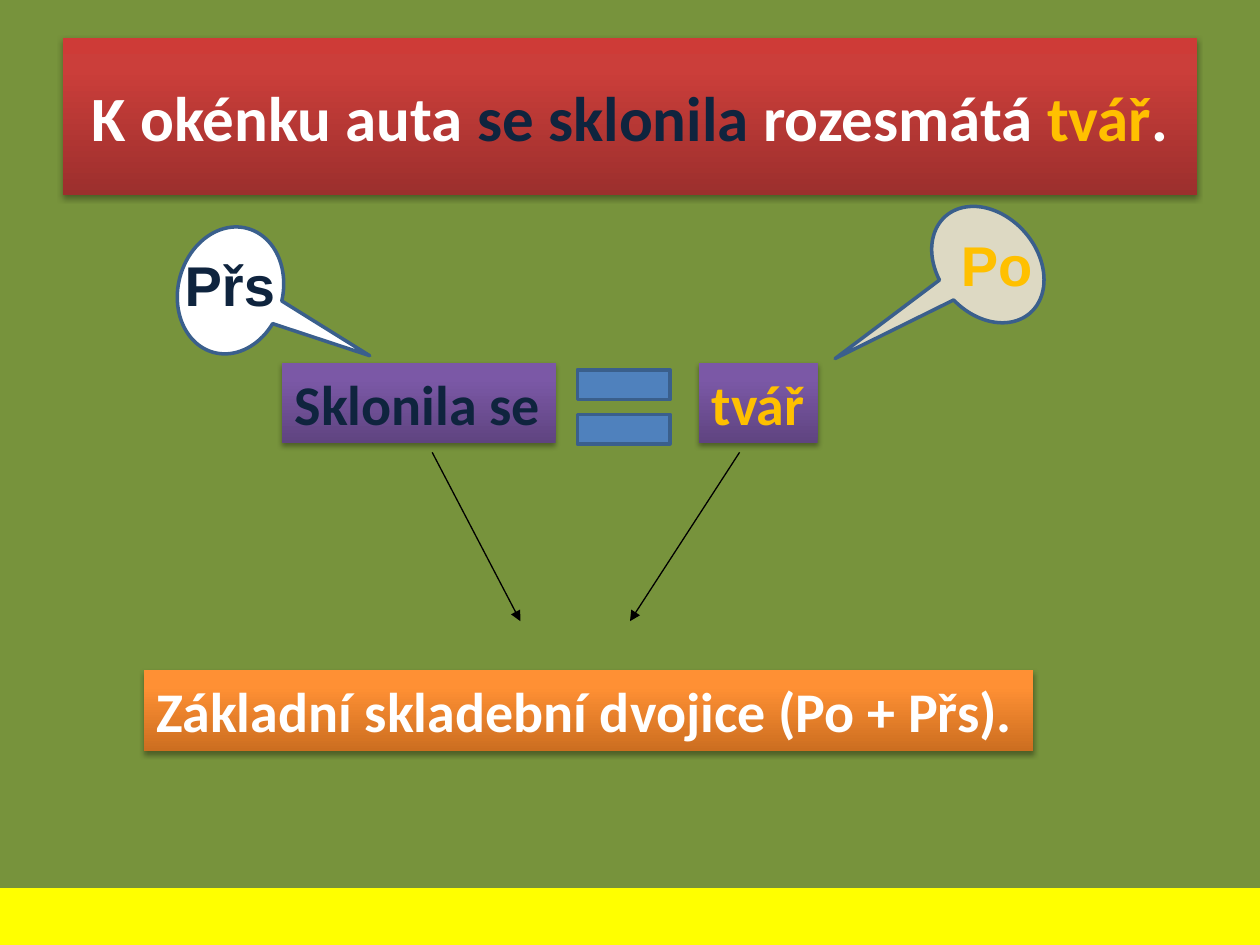
from lxml import etree
from pptx import Presentation
from pptx.dml.color import RGBColor
from pptx.enum import shapes, text
from pptx.oxml import ns
from pptx.util import Inches, Pt

COLORS = {
    "green": "77933C", "navy": "0F243E", "gold": "FFC000", "white": "FFFFFF",
    "beige": "DDD9C3", "blue": "4F81BD", "outline": "3A5F8C",
    "yellow": "FFFF00", "black": "000000",
}
# Gradient stops from the bottom edge to the top edge
GRADIENTS = {
    "red": [(0, "9C2F2D"), (80, "CB3E3A"), (100, "CE3B37")],
    "purple": [(0, "5F4480"), (80, "7B58A6"), (100, "7C57A8")],
    "orange": [(0, "CC6E20"), (80, "FF9034"), (100, "FF9136")],
}


def rgb(name):
    return RGBColor.from_string(COLORS[name])


def sub(parent, tag, **attrs):
    return etree.SubElement(parent, ns.qn(tag), {k: str(v) for k, v in attrs.items()})


def add_text(s, runs, size, font="Calibri", align=None, fit=True):
    """Write bold runs, each a (text, colour) pair, in one paragraph."""
    tf = s.text_frame
    tf.word_wrap = not fit
    tf.vertical_anchor = text.MSO_ANCHOR.TOP if fit else text.MSO_ANCHOR.MIDDLE
    if fit:
        tf.auto_size = text.MSO_AUTO_SIZE.SHAPE_TO_FIT_TEXT
    p = tf.paragraphs[0]
    p.alignment = align or text.PP_ALIGN.LEFT
    for words, color in runs:
        r = p.add_run()
        r.text = words
        r.font.name = font
        r.font.size = Pt(size)
        r.font.bold = True
        r.font.color.rgb = rgb(color)


def add_flat(sp, kind, box, fill, line):
    s = sp.add_shape(kind, *map(Inches, box))
    s.shadow.inherit = False
    s.fill.solid()
    s.fill.fore_color.rgb = rgb(fill)
    s.line.color.rgb = rgb(line)
    s.line.width = Pt(2)
    return s


def add_panel(sp, box, gradient):
    """Add a borderless rectangle with a vertical gradient and a soft shadow."""
    s = sp.add_shape(shapes.MSO_SHAPE.RECTANGLE, *map(Inches, box))
    s.line.fill.background()
    s.fill.gradient()
    s.fill.gradient_angle = 90
    stops = s._element.spPr.find(".//" + ns.qn("a:gsLst"))
    for stop in list(stops):
        stops.remove(stop)
    for pos, color in GRADIENTS[gradient]:
        sub(sub(stops, "a:gs", pos=pos * 1000), "a:srgbClr", val=color)

    s.shadow.inherit = False
    effects = s._element.spPr.find(ns.qn("a:effectLst"))
    shadow = sub(effects, "a:outerShdw", blurRad=Pt(3.1), dist=Pt(1.8),
                 dir=90 * 60000, rotWithShape=0)
    sub(sub(shadow, "a:srgbClr", val=COLORS["black"]), "a:alpha", val=35000)
    return s


def add_callout(sp, box, rotation, tail, fill):
    s = add_flat(sp, shapes.MSO_SHAPE.OVAL_CALLOUT, box, fill, "outline")
    s.rotation = rotation
    s.adjustments[0], s.adjustments[1] = tail


def add_label(sp, box, words, color):
    s = sp.add_textbox(*map(Inches, box))
    add_text(s, [(words, color)], 32, "Arial", text.PP_ALIGN.CENTER)


def add_arrow(sp, start, end):
    c = sp.add_connector(shapes.MSO_CONNECTOR.STRAIGHT, *map(Inches, start + end))
    c.line.color.rgb = rgb("black")
    c.line.width = Pt(0.75)
    sub(c.line._get_or_add_ln(), "a:tailEnd", type="triangle")
    sub(c._element.spPr, "a:effectLst")


def main():
    prs = Presentation()
    prs.slide_width, prs.slide_height = Inches(10), Inches(7.5)
    slide = prs.slides.add_slide(prs.slide_layouts[6])
    slide.background.fill.solid()
    slide.background.fill.fore_color.rgb = rgb("green")
    sp = slide.shapes

    # Sentence
    title = add_panel(sp, (0.5, 0.3, 9, 1.25), "red")
    add_text(title, [("K okénku auta ", "white"), ("se sklonila ", "navy"),
                     ("rozesmátá ", "white"), ("tvář", "gold"), (".", "white")],
             36, align=text.PP_ALIGN.CENTER, fit=False)

    # Arrows from the two words to the conclusion
    add_arrow(sp, (3.43, 3.59), (4.13, 4.93))
    add_arrow(sp, (5.87, 3.59), (5, 4.93))

    # Callouts naming predicate and subject
    add_callout(sp, (1.32, 1.89, 1.02, 0.83), 285.5, (-0.2, 1.45), "white")
    add_callout(sp, (7.33, 1.71, 1.02, 0.78), 48.9, (-0.23, 1.8), "beige")
    add_label(sp, (7.52, 1.78, 0.78, 0.64), "Po", "gold")
    add_label(sp, (1.36, 1.94, 0.93, 0.64), "Přs", "navy")

    # Word pair and conclusion
    for box, gradient, words, color in [
        ((2.24, 2.88, 2.17, 0.64), "purple", "Sklonila se", "navy"),
        ((1.14, 5.32, 7.06, 0.64), "orange",
         "Základní skladební dvojice (Po + Přs).", "white"),
        ((5.55, 2.88, 0.94, 0.64), "purple", "tvář", "gold"),
    ]:
        add_text(add_panel(sp, box, gradient), [(words, color)], 32)
    add_flat(sp, shapes.MSO_SHAPE.MATH_EQUAL, (4.45, 2.73, 1, 1), "blue", "outline")

    # Bottom band
    add_flat(sp, shapes.MSO_SHAPE.RECTANGLE, (0, 7.06, 10, 0.44), "yellow", "yellow")

    prs.save("out.pptx")


if __name__ == "__main__":
    main()
